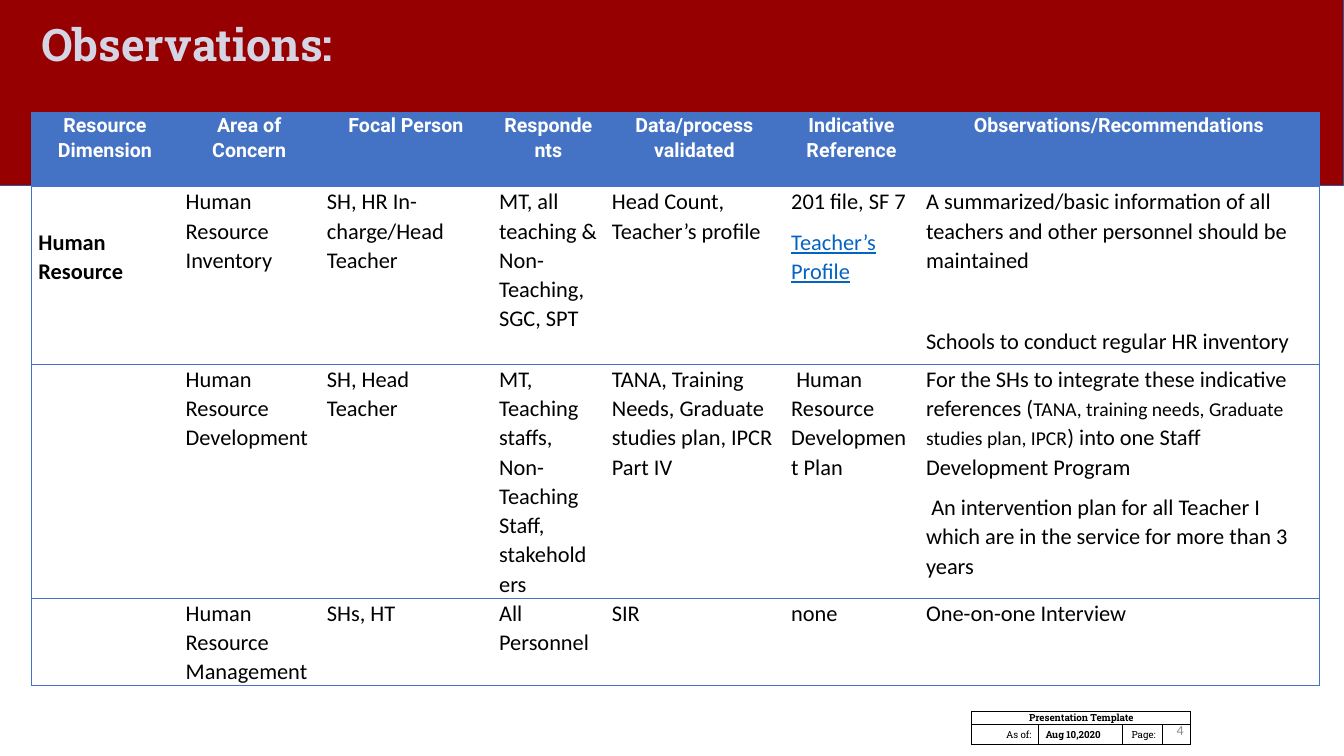
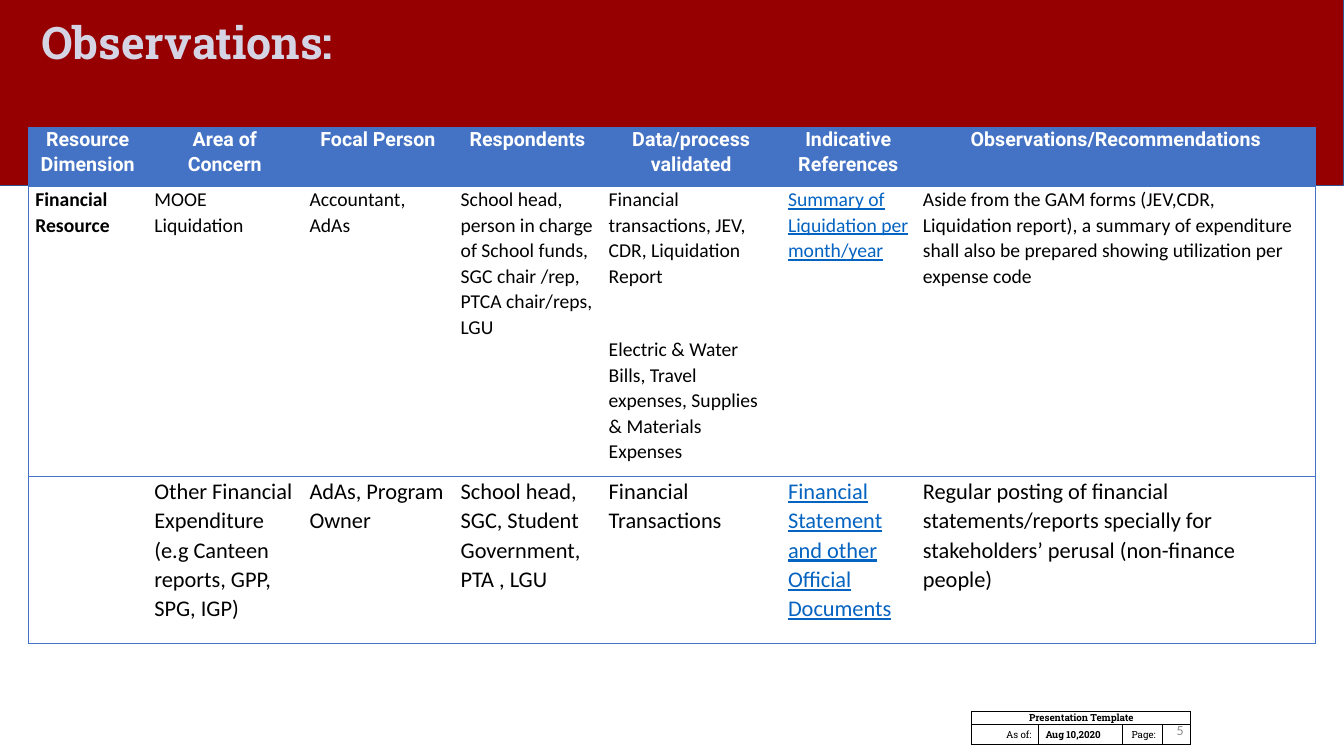
from dataclasses import dataclass

from lxml import etree
from pptx import Presentation
from pptx.dml.color import RGBColor
from pptx.enum.shapes import MSO_SHAPE
from pptx.enum.text import MSO_ANCHOR, PP_ALIGN
from pptx.oxml.ns import qn
from pptx.util import Cm, Pt

RECT = MSO_SHAPE.RECTANGLE
TOP, MIDDLE = MSO_ANCHOR.TOP, MSO_ANCHOR.MIDDLE
LEFT, CENTER, RIGHT = PP_ALIGN.LEFT, PP_ALIGN.CENTER, PP_ALIGN.RIGHT
SIDES = ("L", "R", "T", "B")


@dataclass(frozen=True)
class Theme:
    band: str = "960000"
    edge: str = "325491"
    title: str = "D5D4E4"
    blue: str = "4472C4"
    link: str = "0563C1"
    ink: str = "000000"
    white: str = "FFFFFF"
    grey: str = "8C8C8C"
    body_font: str = "Calibri"
    head_font: str = "Roboto"
    slab_font: str = "Roboto Slab"
    title_size: float = 32
    large: float = 16
    small: float = 14
    page_size: float = 10
    foot_size: float = 7


THEME = Theme()


@dataclass
class Run:
    text: str
    size: float = 0
    link: bool = False


@dataclass
class Para:
    runs: list
    before: float = 0
    indent: float = 0


@dataclass
class Row:
    height: float
    cells: list
    size: float = THEME.large
    drop: float = 0  # extra room above the row's label


def link(text):
    return Para([Run(text, link=True)])


# Text and cell helpers
def write(para, text, font, size, color, bold=False, under=False):
    run = para.add_run()
    run.text = text
    run.font.name, run.font.size = font, Pt(size)
    run.font.bold, run.font.underline = bold, under
    run.font.color.rgb = RGBColor.from_string(color)


def label(slide, box, text, align, font, size, color, bold=False):
    frame = slide.shapes.add_textbox(*map(Cm, box)).text_frame
    frame.word_wrap = True
    frame.vertical_anchor = MIDDLE
    para = frame.paragraphs[0]
    para.alignment, para.line_spacing = align, 0.9
    write(para, text, font, size, color, bold)


def border(cell, sides, color, width):
    props = cell._tc.get_or_add_tcPr()
    for side in SIDES:
        line = etree.SubElement(props, qn("a:ln" + side))
        if side in sides:
            line.set("w", str(Pt(width)))
            fill = etree.SubElement(line, qn("a:solidFill"))
            etree.SubElement(fill, qn("a:srgbClr")).set("val", color)
        else:
            line.set("w", "0")
            etree.SubElement(line, qn("a:noFill"))


def dress(cell, sides, color, width, fill=None, anchor=TOP):
    border(cell, sides, color, width)
    cell.margin_left = cell.margin_right = Cm(0.18)
    cell.margin_top = cell.margin_bottom = Cm(0)
    cell.vertical_anchor = anchor
    if fill:
        cell.fill.solid()
        cell.fill.fore_color.rgb = RGBColor.from_string(fill)
    else:
        cell.fill.background()


def grid(slide, left, top, cols, rows):
    table = slide.shapes.add_table(len(rows), len(cols), Cm(left), Cm(top),
                                   Cm(sum(cols)), Cm(sum(rows))).table
    table.first_row = table.horz_banding = False
    for col, width in zip(table.columns, cols):
        col.width = Cm(width)
    for row, height in zip(table.rows, rows):
        row.height = Cm(height)
    return table


# Title band
def banner(slide, top):
    band = slide.shapes.add_shape(RECT, Cm(-0.71), Cm(-0.15), Cm(34.57), Cm(4.83))
    band.shadow.inherit = False
    band.fill.solid()
    band.fill.fore_color.rgb = RGBColor.from_string(THEME.band)
    band.line.color.rgb = RGBColor.from_string(THEME.edge)
    band.line.width = Pt(1)
    label(slide, (0.79, top, 29.21, 2.41), "Observations:", LEFT,
          THEME.slab_font, THEME.title_size, THEME.title, True)


# Footer block with the page number
def footer(slide, left, top, page):
    table = grid(slide, left, top, (1.68, 2.11, 1.02, 0.71), (0.33, 0.5))
    for cell in table.iter_cells():
        dress(cell, SIDES, THEME.ink, 1, anchor=MIDDLE)
    table.cell(0, 0).merge(table.cell(0, 3))
    parts = ((0, 0, "Presentation Template", CENTER, True),
             (1, 0, "As of:", RIGHT, False),
             (1, 1, "Aug 10,2020", LEFT, True),
             (1, 2, "Page:", RIGHT, False))
    for row, col, text, align, bold in parts:
        para = table.cell(row, col).text_frame.paragraphs[0]
        para.alignment = align
        write(para, text, THEME.slab_font, THEME.foot_size, THEME.ink, bold)
    # Keep the empty cell as low as its row
    last = table.cell(1, 3).text_frame.paragraphs[0]._p
    etree.SubElement(last, qn("a:endParaRPr")).set("sz", str(int(THEME.foot_size * 100)))
    label(slide, (left + 4.45, top - 0.03, 1.14, 1.02), str(page), RIGHT,
          THEME.body_font, THEME.page_size, THEME.grey)


# Table of observations
def fill_cell(cell, paras, size, bold):
    if isinstance(paras, str):
        paras = [paras] if paras else []
    frame = cell.text_frame
    for num, item in enumerate(paras):
        if isinstance(item, str):
            item = Para([Run(item)])
        para = frame.add_paragraph() if num else frame.paragraphs[0]
        if item.indent:
            para._p.get_or_add_pPr().set("indent", str(Cm(item.indent)))
        para.line_spacing, para.space_after = 1.07, Pt(8)
        if item.before:
            para.space_before = Pt(item.before)
        for run in item.runs:
            write(para, run.text, THEME.body_font, run.size or size,
                  THEME.link if run.link else THEME.ink, bold, run.link)


def matrix(slide, left, top, cols, height, heads, rows):
    table = grid(slide, left, top, cols, [height] + [row.height for row in rows])
    last = len(cols) - 1
    for col, head in enumerate(heads):
        ends = ("L",) * (col == 0) + ("R",) * (col == last)
        cell = table.cell(0, col)
        dress(cell, ends + ("T", "B"), THEME.blue, 0.5, THEME.blue)
        para = cell.text_frame.paragraphs[0]
        para.alignment = CENTER
        para.line_spacing, para.space_after = 1.07, Pt(8)
        write(para, head, THEME.head_font, THEME.small, THEME.white, True)
        for num, row in enumerate(rows, 1):
            cell = table.cell(num, col)
            dress(cell, ends + ("T", "B"), THEME.blue, 0.5)
            if col == 0:
                cell.margin_top = Cm(row.drop)
            fill_cell(cell, row.cells[col], row.size, col == 0)


def heads(source):
    return ("Resource Dimension", "Area of Concern", "Focal Person", "Respondents",
            "Data/process validated", source, "Observations/Recommendations")


WIDE = (4.52, 3.4, 10.08)  # last three columns on every slide

STAFF = [
    Row(4.47, [
        "Human Resource",
        "Human Resource Inventory",
        "SH, HR In-charge/Head Teacher",
        "MT, all teaching & Non-Teaching, SGC, SPT",
        "Head Count, Teacher’s profile",
        ["201 file, SF 7", link("Teacher’s Profile")],
        ["A summarized/basic information of all teachers and other personnel "
         "should be maintained",
         Para([Run("Schools to conduct regular HR inventory")], before=29)],
    ], drop=1.02),
    Row(5.9, [
        "",
        "Human Resource Development",
        "SH, Head Teacher",
        "MT, Teaching staffs, Non-Teaching Staff, stakeholders",
        "TANA, Training Needs, Graduate studies plan, IPCR Part IV",
        [Para([Run("Human Resource Development Plan")], indent=0.13)],
        [Para([Run("For the SHs to integrate these indicative references ("),
               Run("TANA, training needs, Graduate studies plan, IPCR", THEME.small),
               Run(") into one Staff Development Program")]),
         Para([Run("An intervention plan for all Teacher I which are in the "
                   "service for more than 3 years")], indent=0.13)],
    ]),
    Row(2.2, [
        "",
        "Human Resource Management",
        "SHs, HT",
        "All Personnel",
        "SIR",
        "none",
        "One-on-one Interview",
    ]),
]

FUNDS = [
    Row(7.3, [
        "Financial Resource",
        "MOOE Liquidation",
        "Accountant, AdAs",
        "School head, person in charge of School funds, SGC chair /rep, "
        "PTCA chair/reps, LGU",
        ["Financial transactions, JEV, CDR, Liquidation Report",
         Para([Run("Electric & Water Bills, Travel expenses, Supplies & "
                   "Materials Expenses")], before=26)],
        [link("Summary of Liquidation per month/year")],
        "Aside from the GAM forms (JEV,CDR, Liquidation report), a summary of "
        "expenditure shall also be prepared showing utilization per expense code",
    ], size=THEME.small),
    Row(4.22, [
        "",
        "Other Financial Expenditure (e.g Canteen reports, GPP, SPG, IGP)",
        "AdAs, Program Owner",
        "School head, SGC, Student Government, PTA , LGU",
        "Financial Transactions",
        [link("Financial Statement and other Official Documents")],
        "Regular posting of financial statements/reports specially for "
        "stakeholders’ perusal (non-finance people)",
    ]),
]


def build(deck, page, title_top, *table):
    slide = deck.slides.add_slide(deck.slide_layouts[6])
    banner(slide, title_top)
    footer(slide, 24.49, 17.93, page)
    matrix(slide, *table)


def main():
    deck = Presentation()
    deck.slide_width, deck.slide_height = Cm(33.87), Cm(19.05)
    build(deck, 4, -0.03, 0.79, 2.84, (3.71, 3.56, 4.34, 2.84) + WIDE, 1.86,
          heads("Indicative Reference"), STAFF)
    build(deck, 5, -0.08, 0.71, 3.2, (3, 3.91, 3.81, 3.73) + WIDE, 1.5,
          heads("Indicative References"), FUNDS)
    deck.save("out.pptx")


if __name__ == "__main__":
    main()
